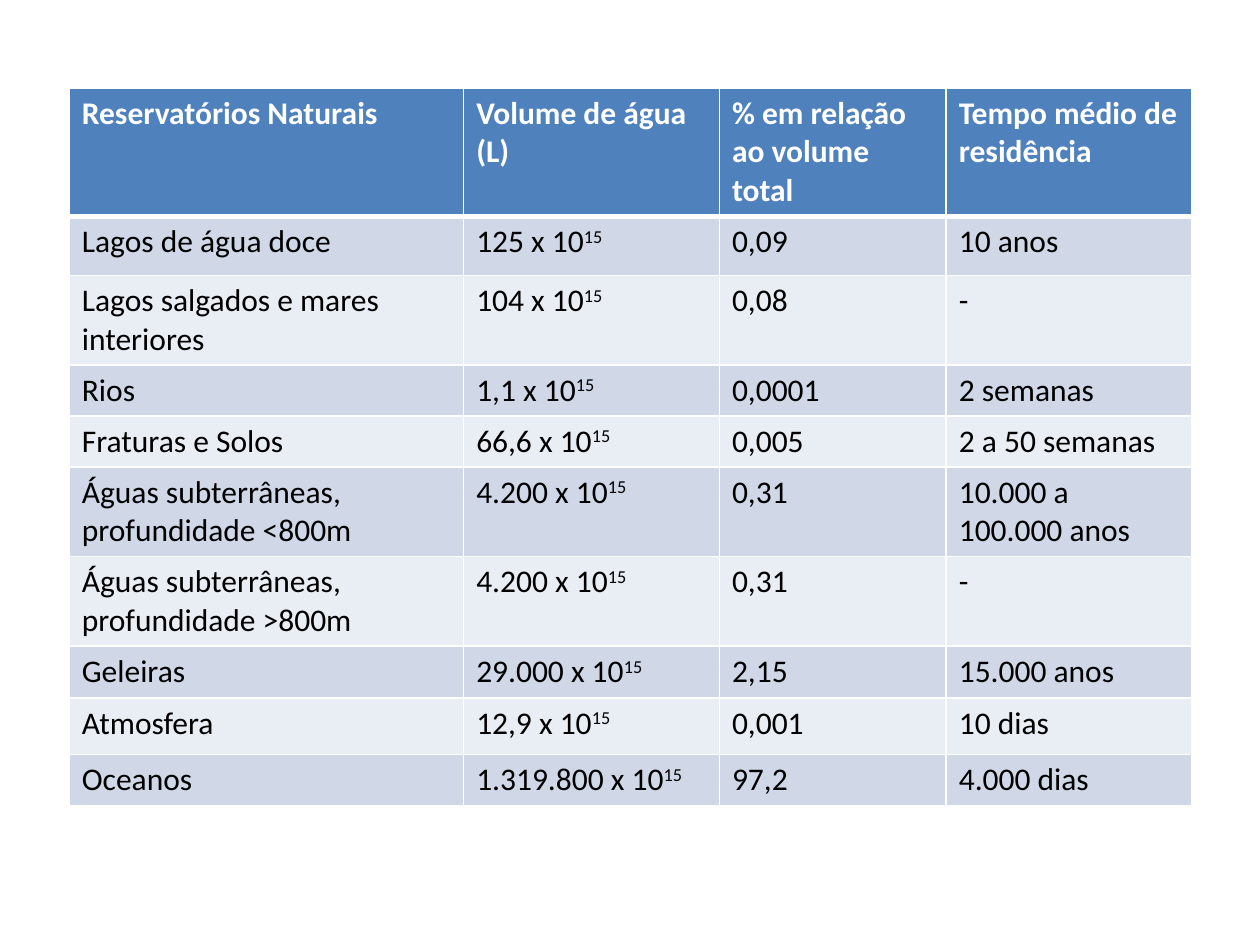
from dataclasses import dataclass

from lxml import etree
from pptx import Presentation
from pptx import util as u
from pptx.dml.color import RGBColor
from pptx.oxml import ns

WHITE = RGBColor(0xFF, 0xFF, 0xFF)
BLACK = RGBColor(0x00, 0x00, 0x00)
BLUE = RGBColor(0x4F, 0x81, 0xBD)
BAND_DARK = RGBColor(0xD0, 0xD8, 0xE8)
BAND_LIGHT = RGBColor(0xE9, 0xED, 0xF4)

WIDTH, HEIGHT = u.Inches(10), u.Inches(7.5)
UNIT = WIDTH // 1000
LEFT, TOP = 55, 70
COLUMNS = (313, 203, 180, 195)
HEADER_HEIGHT = 70
HEADERS = (
    "Reservatórios Naturais",
    "Volume de água (L)",
    "% em relação ao volume total",
    "Tempo médio de residência",
)


@dataclass(frozen=True)
class Reservoir:
    name: str
    volume: str
    share: str
    residence: str
    height: int


RESERVOIRS = (
    Reservoir("Lagos de água doce", "125", "0,09", "10 anos", 47),
    Reservoir("Lagos salgados e mares interiores", "104", "0,08", "-", 55),
    Reservoir("Rios", "1,1", "0,0001", "2 semanas", 38),
    Reservoir("Fraturas e Solos", "66,6", "0,005", "2 a 50 semanas", 39),
    Reservoir("Águas subterrâneas, profundidade <800m", "4.200", "0,31",
              "10.000 a 100.000 anos", 63),
    Reservoir("Águas subterrâneas, profundidade >800m", "4.200", "0,31", "-", 69),
    Reservoir("Geleiras", "29.000", "2,15", "15.000 anos", 41),
    Reservoir("Atmosfera", "12,9", "0,001", "10 dias", 45),
    Reservoir("Oceanos", "1.319.800", "97,2", "4.000 dias", 41),
)


def add_text(p, text: str, *, color: RGBColor = BLACK, bold: bool = False,
             baseline: int = 0) -> None:
    r = p.add_run()
    r.text = text
    r.font.name = "Calibri"
    r.font.size = u.Pt(18)
    r.font.bold = bold
    r.font.color.rgb = color
    if baseline:
        r._r.get_or_add_rPr().set("baseline", str(baseline * 1000))


def style_cell(cell, fill: RGBColor, top: int = 1, bottom: int = 1) -> None:
    tc_pr = cell._tc.get_or_add_tcPr()
    for side, points in (("L", 1), ("R", 1), ("T", top), ("B", bottom)):
        line = etree.SubElement(tc_pr, ns.qn(f"a:ln{side}"), w=str(u.Pt(points)))
        solid = etree.SubElement(line, ns.qn("a:solidFill"))
        etree.SubElement(solid, ns.qn("a:srgbClr"), val=str(WHITE))
    cell.fill.solid()
    cell.fill.fore_color.rgb = fill


def fill_header(table) -> None:
    for cell, title in zip(table.rows[0].cells, HEADERS):
        style_cell(cell, BLUE, bottom=3)
        add_text(cell.text_frame.paragraphs[0], title, color=WHITE, bold=True)


def fill_reservoir(table, row: int, item: Reservoir) -> None:
    values = (item.name, f"{item.volume} x 10", item.share, item.residence)
    for col, value in enumerate(values):
        cell = table.cell(row, col)
        style_cell(cell, BAND_DARK if row % 2 else BAND_LIGHT,
                   top=3 if row == 1 else 1)
        p = cell.text_frame.paragraphs[0]
        add_text(p, value)
        if col == 1:
            add_text(p, "15", baseline=30)


def main() -> None:
    prs = Presentation()
    prs.slide_width, prs.slide_height = WIDTH, HEIGHT
    s = prs.slides.add_slide(prs.slide_layouts[6])
    heights = (HEADER_HEIGHT, *(item.height for item in RESERVOIRS))
    table = s.shapes.add_table(
        len(heights), len(COLUMNS), LEFT * UNIT, TOP * UNIT,
        sum(COLUMNS) * UNIT, sum(heights) * UNIT).table
    for column, width in zip(table.columns, COLUMNS):
        column.width = width * UNIT
    for row, height in zip(table.rows, heights):
        row.height = height * UNIT
    fill_header(table)
    for row, item in enumerate(RESERVOIRS, start=1):
        fill_reservoir(table, row, item)
    prs.save("out.pptx")


if __name__ == "__main__":
    main()
